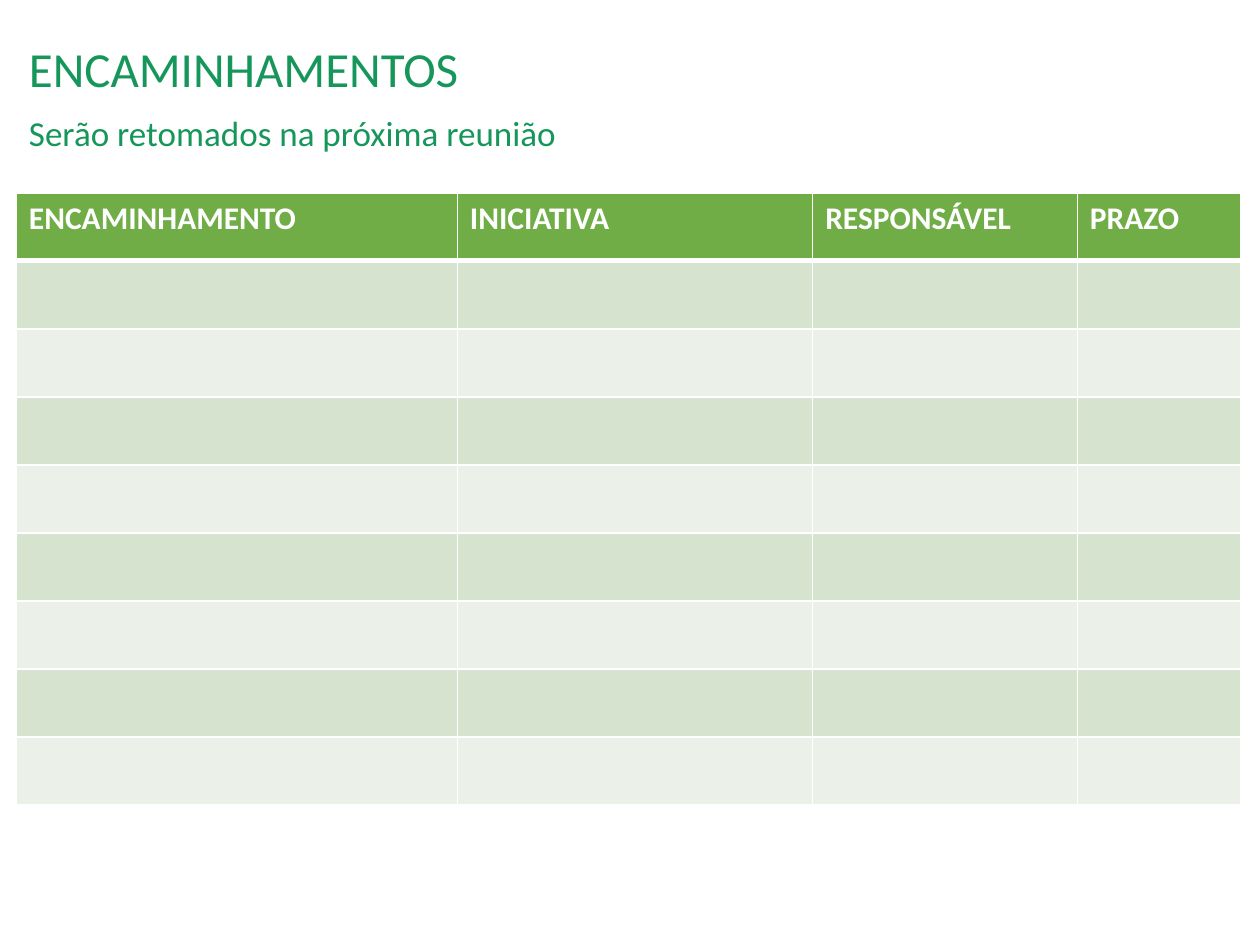
from lxml import etree
from pptx import Presentation
from pptx.dml.color import RGBColor
from pptx.enum import text
from pptx.oxml import ns
from pptx.util import Inches, Pt

GREEN = RGBColor(0x16, 0x96, 0x5A)
HEADER_GREEN = RGBColor(0x70, 0xAD, 0x47)
BAND_DARK = RGBColor(0xD5, 0xE3, 0xCF)
BAND_LIGHT = RGBColor(0xEB, 0xF1, 0xE9)
WHITE = RGBColor(0xFF, 0xFF, 0xFF)

HEADINGS = ["ENCAMINHAMENTO", "INICIATIVA", "RESPONSÁVEL", "PRAZO"]
COLUMN_WIDTHS = [3.5, 2.82, 2.1, 1.3]
ROW_COUNT = 9
ROW_HEIGHT = 0.54


def set_attributes(target, values):
    for name, value in values.items():
        setattr(target, name, value)


def format_font(paragraph, size, color, bold=False):
    set_attributes(paragraph.font, {"name": "Calibri", "size": Pt(size), "bold": bold})
    paragraph.font.color.rgb = color


def add_title(slide, lines):
    title = slide.shapes.title
    set_attributes(title, {
        "left": Inches(0.13), "top": Inches(0.31),
        "width": Inches(9.87), "height": Inches(0.84),
    })
    frame = title.text_frame
    set_attributes(frame, {
        "text": "\n".join(line for line, size in lines),
        "word_wrap": True,
        "auto_size": text.MSO_AUTO_SIZE.NONE,
        "vertical_anchor": text.MSO_ANCHOR.TOP,
    })
    for index, (paragraph, (line, size)) in enumerate(zip(frame.paragraphs, lines)):
        set_attributes(paragraph, {
            "alignment": text.PP_ALIGN.LEFT,
            "line_spacing": 0.9,
            "space_before": Pt(10 if index else 0),
        })
        format_font(paragraph, size, GREEN)


def set_borders(cell, widths):
    properties = cell._tc.get_or_add_tcPr()
    for side, width in widths.items():
        line = etree.SubElement(properties, ns.qn(f"a:ln{side}"), w=str(Pt(width)))
        fill = etree.SubElement(line, ns.qn("a:solidFill"))
        etree.SubElement(fill, ns.qn("a:srgbClr"), val=str(WHITE))


def format_cell(cell, row_index):
    set_borders(cell, {
        "L": 1, "R": 1,
        "T": 3 if row_index == 1 else 1,
        "B": 3 if row_index == 0 else 1,
    })
    band = BAND_DARK if row_index % 2 else BAND_LIGHT
    cell.fill.solid()
    cell.fill.fore_color.rgb = HEADER_GREEN if row_index == 0 else band


def add_action_table(slide):
    table = slide.shapes.add_table(
        ROW_COUNT, len(HEADINGS), Inches(0.13), Inches(1.53),
        Inches(sum(COLUMN_WIDTHS)), Inches(ROW_COUNT * ROW_HEIGHT),
    ).table
    for column, width in zip(table.columns, COLUMN_WIDTHS):
        column.width = Inches(width)
    for row_index, row in enumerate(table.rows):
        row.height = Inches(ROW_HEIGHT)
        for cell in row.cells:
            format_cell(cell, row_index)
    for cell, heading in zip(table.rows[0].cells, HEADINGS):
        cell.text = heading
        format_font(cell.text_frame.paragraphs[0], 18, WHITE, bold=True)


def main():
    presentation = Presentation()
    set_attributes(presentation, {"slide_width": Inches(10), "slide_height": Inches(7.5)})
    slide = presentation.slides.add_slide(presentation.slide_layouts[5])
    add_title(slide, [("ENCAMINHAMENTOS", 28), ("Serão retomados na próxima reunião", 20)])
    add_action_table(slide)
    presentation.save("out.pptx")


if __name__ == "__main__":
    main()
